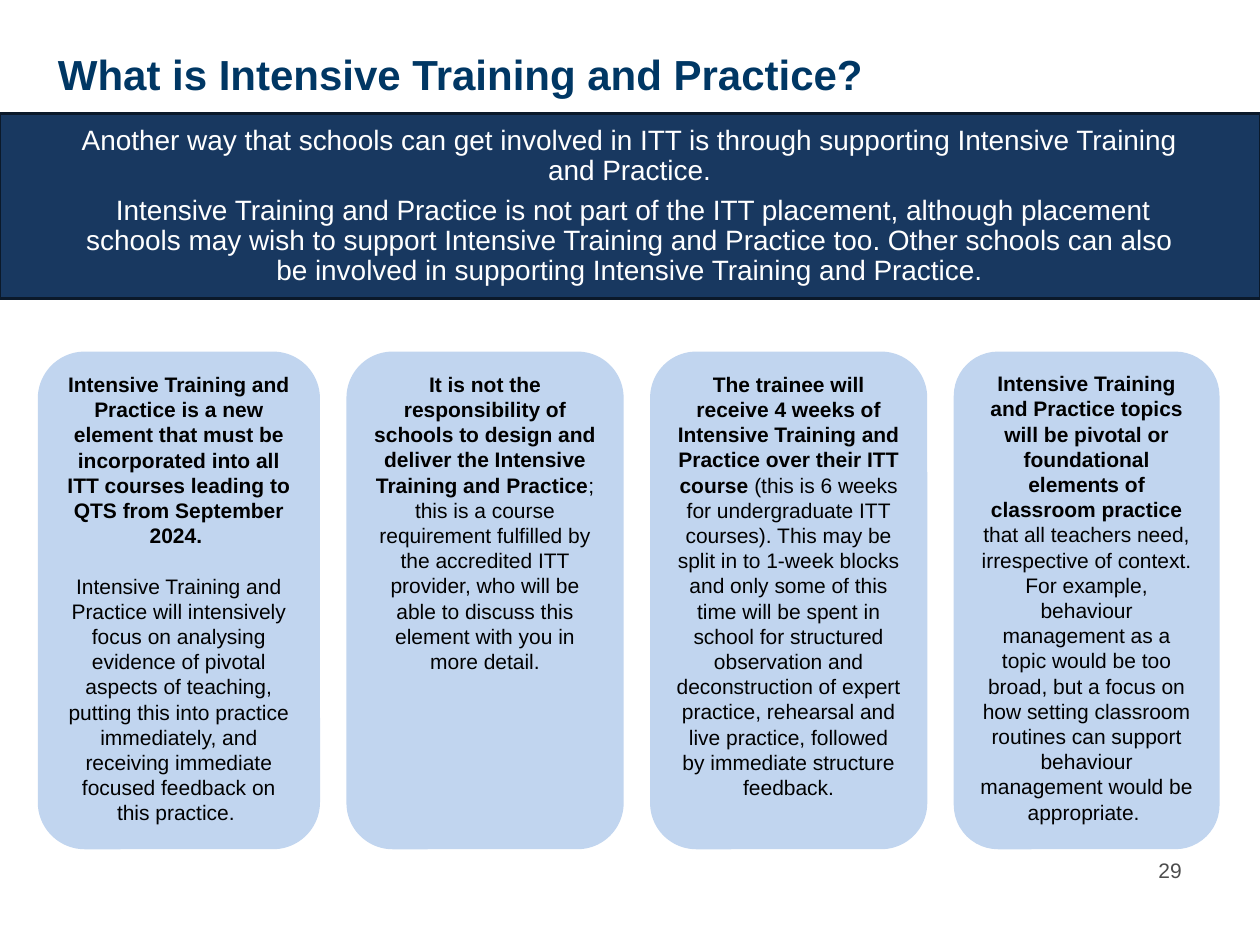
import pptx
import pptx.util
import pptx.dml.color
import pptx.enum.shapes
import pptx.enum.text
import pptx.oxml.ns
import lxml.etree

Pt = pptx.util.Pt
RGBColor = pptx.dml.color.RGBColor
Align = pptx.enum.text.PP_ALIGN
Shape = pptx.enum.shapes.MSO_SHAPE

TITLE_BLUE = RGBColor(0x00, 0x37, 0x64)
BAND_BLUE = RGBColor(0x18, 0x38, 0x60)
BAND_EDGE = RGBColor(0x0B, 0x19, 0x2A)
CARD_BLUE = RGBColor(0xC1, 0xD5, 0xEF)
WHITE = RGBColor(0xFF, 0xFF, 0xFF)
BLACK = RGBColor(0x00, 0x00, 0x00)
GREY = RGBColor(0x4D, 0x4D, 0x4D)

TITLE = "What is Intensive Training and Practice?"
INTRODUCTION = [
    "Another way that schools can get involved in ITT is through supporting "
    "Intensive Training and Practice.",
    " Intensive Training and Practice is not part of the ITT placement, although "
    "placement schools may wish to support Intensive Training and Practice too. "
    "Other schools can also be involved in supporting Intensive Training and Practice.",
]

# Each card: width, gap between paragraphs, paragraphs of (bold text, plain text)
CARDS = [
    (161.3, 14.4, [
        ("Intensive Training and Practice is a new element that must be incorporated "
         "into all ITT courses leading to QTS from September 2024. ", ""),
        ("", "Intensive Training and Practice will intensively focus on analysing "
         "evidence of pivotal aspects of teaching, putting this into practice "
         "immediately, and receiving immediate focused feedback on this practice. "),
    ]),
    (158.4, 0, [
        ("It is not the responsibility of schools to design and deliver the "
         "Intensive Training and Practice",
         "; this is a course requirement fulfilled by the accredited ITT provider, "
         "who will be able to discuss this element with you in more detail."),
    ]),
    (158.4, 0, [
        ("The trainee will receive 4 weeks of Intensive Training and Practice over "
         "their ITT course ",
         "(this is 6 weeks for undergraduate ITT courses). This may be split in to "
         "1-week blocks and only some of this time will be spent in school for "
         "structured observation and deconstruction of expert practice, rehearsal "
         "and live practice, followed by immediate structure feedback."),
    ]),
    (151.9, 0, [
        ("Intensive Training and Practice topics will be pivotal or foundational "
         "elements of classroom practice ",
         "that all teachers need, irrespective of context. "),
        ("", "For example, behaviour management as a topic would be too broad, but a "
         "focus on how setting classroom routines can support behaviour management "
         "would be appropriate. "),
    ]),
]
CARD_LEFT, CARD_TOP, CARD_HEIGHT, CARD_GAP = 21.6, 200.9, 284.4, 15.1


def apply(target, values):
    for name, value in values.items():
        setattr(target, name, value)


class SlideBuilder:
    font_name = "Arial"

    def __init__(self, page):
        self.page = page

    def place(self, box, left, top, width, height):
        apply(box, {"left": Pt(left), "top": Pt(top),
                    "width": Pt(width), "height": Pt(height)})

    def fill_text(self, box, paragraphs, size, color, align, inset=None, **spacing):
        """Fill a box with paragraphs of (bold text, plain text)."""
        frame = box.text_frame
        apply(frame, {"word_wrap": True,
                      "auto_size": pptx.enum.text.MSO_AUTO_SIZE.NONE,
                      "vertical_anchor": pptx.enum.text.MSO_ANCHOR.TOP})
        if inset is not None:
            apply(frame, {"margin_" + side: Pt(inset)
                          for side in ("left", "top", "right", "bottom")})
        for index, texts in enumerate(paragraphs):
            para = frame.add_paragraph() if index else frame.paragraphs[0]
            apply(para, {"alignment": align, "space_before": Pt(0), **spacing})
            for text, bold in zip(texts, (True, False)):
                if text:
                    span = para.add_run()
                    span.text = text
                    apply(span.font, {"name": self.font_name, "size": Pt(size),
                                      "bold": bold})
                    span.font.color.rgb = color

    def title(self, text, *place):
        box = self.page.shapes.title
        self.place(box, *place)
        self.fill_text(box, [(text, "")], 24, TITLE_BLUE, Align.LEFT, 0,
                       line_spacing=0.9)

    def body(self, texts, *place):
        box = self.page.placeholders[1]
        self.place(box, *place)
        self.fill_text(box, [("", text) for text in texts], 16, WHITE, Align.CENTER,
                       line_spacing=0.9, space_after=Pt(5.6))
        # Centred lines without bullets or indent
        for para in box.text_frame.paragraphs:
            properties = para._p.get_or_add_pPr()
            for name in ("marL", "indent"):
                properties.set(name, "0")
            lxml.etree.SubElement(properties, pptx.oxml.ns.qn("a:buNone"))

    def panel(self, kind, fill, *place, edge=None):
        box = self.page.shapes.add_shape(kind, *map(Pt, place))
        box.shadow.inherit = False
        box.fill.solid()
        box.fill.fore_color.rgb = fill
        if edge is None:
            box.line.fill.background()
        else:
            box.line.color.rgb = edge
            box.line.width = Pt(1.5)
        return box

    def band(self, *place):
        box = self.panel(Shape.RECTANGLE, BAND_BLUE, *place, edge=BAND_EDGE)
        # The band lies behind the title and body
        self.page.shapes.title.element.addprevious(box.element)

    def card(self, paragraphs, gap, *place):
        box = self.panel(Shape.ROUNDED_RECTANGLE, CARD_BLUE, *place)
        self.fill_text(box, paragraphs, 12, BLACK, Align.CENTER, space_after=Pt(gap))

    def page_number(self, text, *place):
        box = self.page.shapes.add_textbox(*map(Pt, place))
        self.fill_text(box, [("", text)], 12, GREY, Align.RIGHT, 0, line_spacing=0.9)


def main():
    deck = pptx.Presentation()
    apply(deck, {"slide_width": Pt(720), "slide_height": Pt(540)})
    builder = SlideBuilder(deck.slides.add_slide(deck.slide_layouts[1]))

    # Heading and introduction
    builder.band(0, 64.8, 720, 105.8)
    builder.title(TITLE, 33.1, 31, 630, 40.3)
    builder.body(INTRODUCTION, 34.6, 68.4, 650.2, 125.3)

    # Row of cards with equal gaps
    left = CARD_LEFT
    for width, gap, paragraphs in CARDS:
        builder.card(paragraphs, gap, left, CARD_TOP, width, CARD_HEIGHT)
        left += width + CARD_GAP

    builder.page_number("29", 630.7, 491.8, 44.6, 14.4)
    deck.save("out.pptx")


if __name__ == "__main__":
    main()
